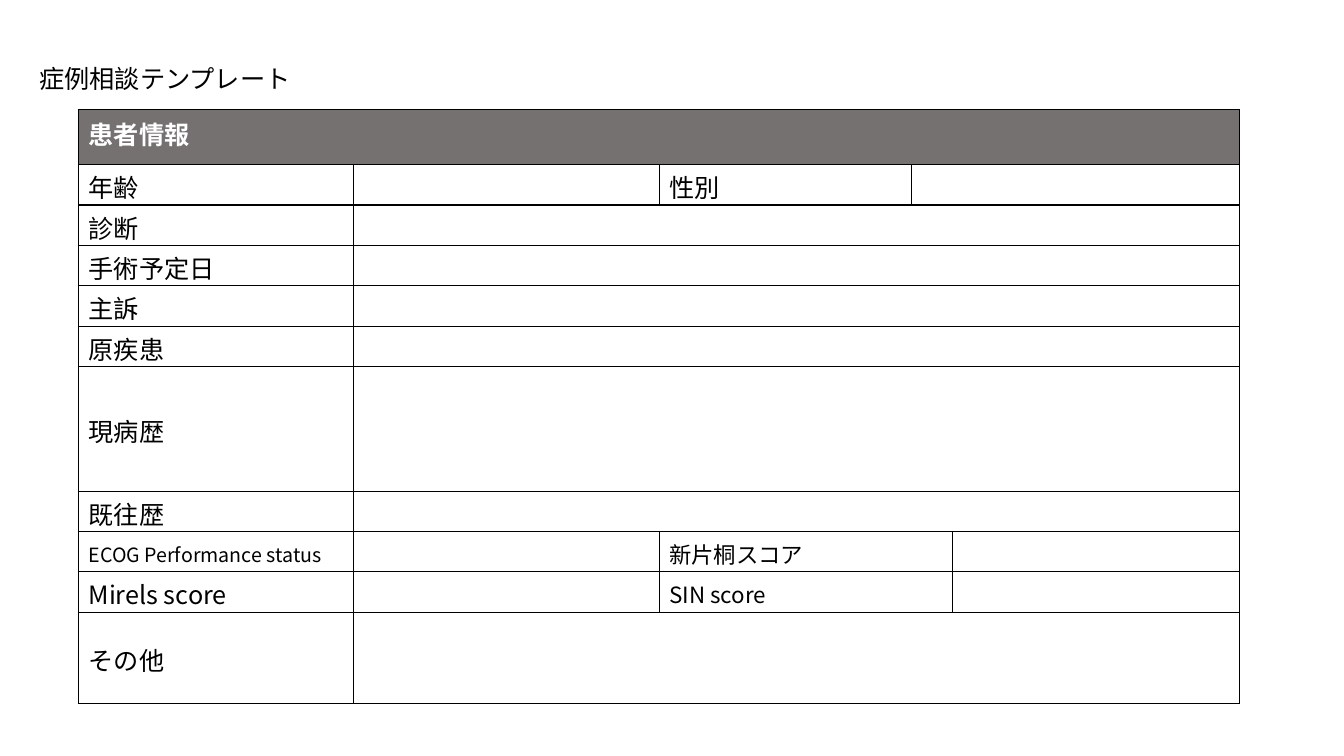
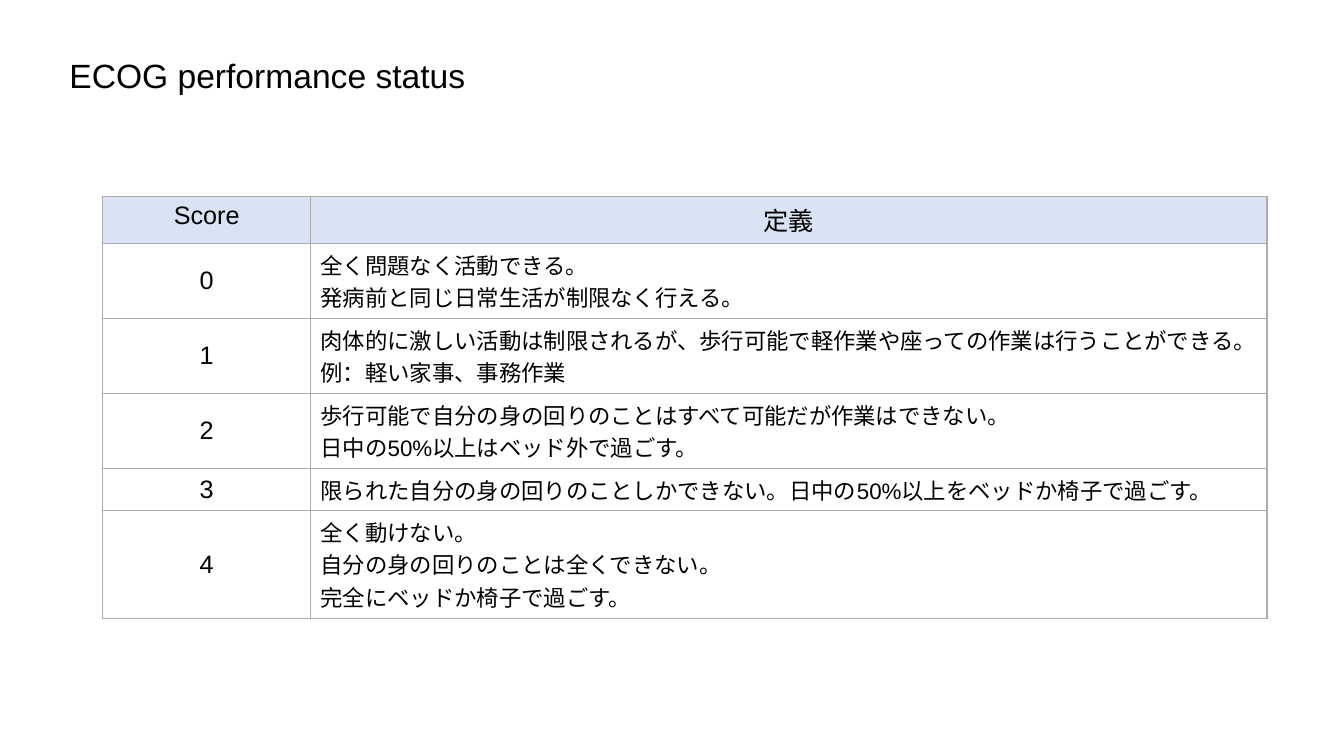
import dataclasses

import lxml.etree
import pptx
import pptx.dml.color
import pptx.enum.text
import pptx.oxml.ns
import pptx.util

Pt = pptx.util.Pt
ALIGN = pptx.enum.text.PP_ALIGN
ANCHOR = pptx.enum.text.MSO_ANCHOR
qn = pptx.oxml.ns.qn


@dataclasses.dataclass(frozen=True)
class Theme:
    black: str = "000000"
    white: str = "FFFFFF"
    band: str = "767171"
    pale: str = "DAE3F3"
    grey: str = "AFABAB"
    sans: str = "Arial"
    asian: str = "Noto Sans CJK JP"
    title: int = 24
    large: int = 18
    text: int = 16
    small: int = 14
    line: int = 1


THEME = Theme()

WIDTHS = [196.6, 218.2, 180, 29.5, 205.1]
LINE, TALL = 28.8, 89
FORM = [
    (39.2, {0: "患者情報"}, [(0, 4)]),
    (LINE, {0: "年齢", 2: "性別"}, [(3, 4)]),
    (LINE, {0: "診断"}, [(1, 4)]),
    (LINE, {0: "手術予定日"}, [(1, 4)]),
    (LINE, {0: "主訴"}, [(1, 4)]),
    (LINE, {0: "原疾患"}, [(1, 4)]),
    (TALL, {0: "現病歴"}, [(1, 4)]),
    (LINE, {0: "既往歴"}, [(1, 4)]),
    (LINE, {0: "ECOG Performance status", 2: "新片桐スコア"}, [(2, 3)]),
    (LINE, {0: "Mirels score", 2: "SIN score"}, [(2, 3)]),
    (65.5, {0: "その他"}, [(1, 4)]),
]
SIZES = {
    "ECOG Performance status": THEME.small,
    "新片桐スコア": THEME.text,
    "SIN score": THEME.text,
}
SCORES = [
    "全く問題なく活動できる。\n発病前と同じ日常生活が制限なく行える。",
    "肉体的に激しい活動は制限されるが、歩行可能で軽作業や座っての作業は行うことができる。\n"
    "例：軽い家事、事務作業",
    "歩行可能で自分の身の回りのことはすべて可能だが作業はできない。\n"
    "日中の50%以上はベッド外で過ごす。",
    "限られた自分の身の回りのことしかできない。日中の50%以上をベッドか椅子で過ごす。",
    "全く動けない。\n自分の身の回りのことは全くできない。\n完全にベッドか椅子で過ごす。",
]


def shade(code):
    return pptx.dml.color.RGBColor.from_string(code)


def write(frame, text, size=THEME.large, font=THEME.asian, color=THEME.black,
          bold=False, align=ALIGN.LEFT):
    frame.word_wrap = True
    for i, words in enumerate(text.split("\n")):
        para = frame.add_paragraph() if i else frame.paragraphs[0]
        para.alignment = align
        run = para.add_run()
        run.text = words
        run.font.size = Pt(size)
        run.font.name = font
        run.font.bold = bold
        run.font.color.rgb = shade(color)
        asian = lxml.etree.SubElement(run.font._element, qn("a:ea"))
        asian.set("typeface", THEME.asian)


def head(slide, box, text, **format):
    frame = slide.shapes.add_textbox(*map(Pt, box)).text_frame
    write(frame, text, **format)


def edge(cell, color):
    props = cell._tc.get_or_add_tcPr()
    for side in "LRTB":
        line = lxml.etree.SubElement(props, qn("a:ln" + side), w=str(Pt(THEME.line)))
        fill = lxml.etree.SubElement(line, qn("a:solidFill"))
        lxml.etree.SubElement(fill, qn("a:srgbClr"), val=color)


def grid(slide, left, top, widths, heights, line, fill):
    box = left, top, sum(widths), sum(heights)
    table = slide.shapes.add_table(len(heights), len(widths), *map(Pt, box)).table
    table.first_row = table.horz_banding = False
    for col, width in zip(table.columns, widths):
        col.width = Pt(width)
    for r, height in enumerate(heights):
        table.rows[r].height = Pt(height)
        for cell in table.rows[r].cells:
            edge(cell, line)
            if r:
                cell.fill.background()
            else:
                cell.fill.solid()
                cell.fill.fore_color.rgb = shade(fill)
    return table


def intake(slide, left, top):
    head(slide, (left, top, 480, 29), "症例相談テンプレート")
    heights = [height for height, _, _ in FORM]
    table = grid(slide, left + 35.1, top + 36.7, WIDTHS, heights, THEME.black, THEME.band)
    for r, (_, labels, spans) in enumerate(FORM):
        for first, last in spans:
            table.cell(r, first).merge(table.cell(r, last))
        for c, text in labels.items():
            cell = table.cell(r, c)
            size = SIZES.get(text, THEME.large)
            if r:
                cell.margin_top, cell.margin_bottom = Pt(2.6), Pt(0)
                cell.vertical_anchor = ANCHOR.MIDDLE
            write(cell.text_frame, text, size=size, bold=not r,
                  color=THEME.black if r else THEME.white)


def scale(slide, left, top):
    head(slide, (left, top, 480, 36), "ECOG performance status",
         size=THEME.title, font=THEME.sans)
    heights = [33.3] + [7.3 + 23.15 * (text.count("\n") + 1) for text in SCORES]
    table = grid(slide, left + 31, top + 104.4, [148.3, 683.3], heights,
                 THEME.grey, THEME.pale)
    for c, text in enumerate(["Score", "定義"]):
        write(table.cell(0, c).text_frame, text, font=THEME.sans, align=ALIGN.CENTER)
    for score, text in enumerate(SCORES):
        mark, note = table.rows[score + 1].cells
        mark.vertical_anchor = ANCHOR.MIDDLE
        write(mark.text_frame, str(score), font=THEME.sans, align=ALIGN.CENTER)
        write(note.text_frame, text, size=THEME.text, font=THEME.sans)


def main():
    deck = pptx.Presentation()
    deck.slide_width, deck.slide_height = Pt(960), Pt(540)
    for build, left, top in [(intake, 21, 41.8), (scale, 42.5, 36)]:
        build(deck.slides.add_slide(deck.slide_layouts[6]), left, top)
    deck.save("out.pptx")


if __name__ == "__main__":
    main()
